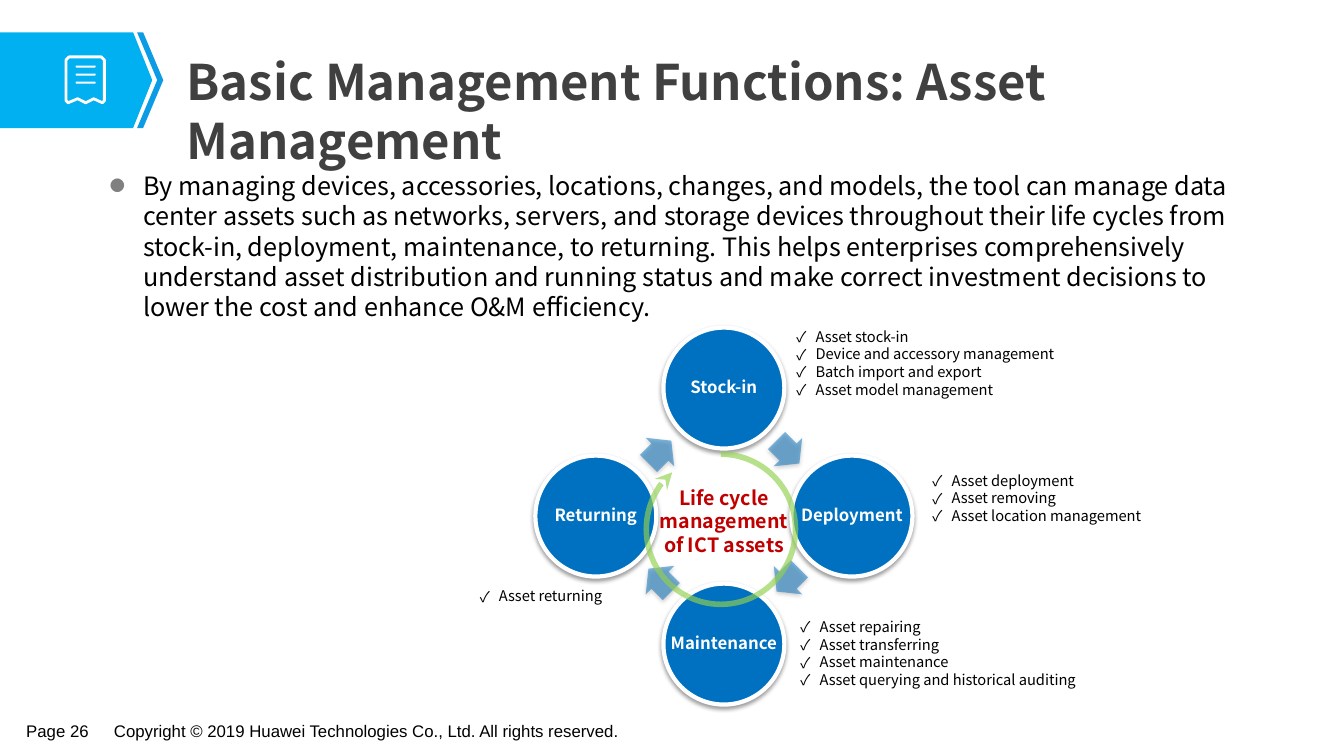
from math import cos, sin, radians
from lxml.etree import SubElement
from pptx import Presentation
from pptx.dml.color import RGBColor
from pptx.enum.shapes import MSO_SHAPE
from pptx.enum.text import MSO_ANCHOR, PP_ALIGN
from pptx.oxml.ns import qn
from pptx.util import Inches, Pt

HUES = {"sky": "00B0F0", "edge": "0B9CE5", "blue": "0070C0", "white": "FFFFFF",
        "dark": "404040", "black": "000000", "grey": "808080", "red": "C00000",
        "green": "92D050"}
FONT = "Noto Sans CJK SC"

BODY = ("By managing devices, accessories, locations, changes, and models, the tool can manage "
        "data center assets such as networks, servers, and storage devices throughout their "
        "life cycles from stock-in, deployment, maintenance, to returning. This helps "
        "enterprises comprehensively understand asset distribution and running status and "
        "make correct investment decisions to lower the cost and enhance O&M efficiency.")

# Stages clockwise from the top
STAGES = ["Stock-in", "Deployment", "Maintenance", "Returning"]

# Box, line spacing and items of each check list
LISTS = [
    ((7.8, 3.2, 2.88, 0.81), 1, ["Asset stock-in", "Device and accessory management",
                                 "Batch import and export", "Asset model management"]),
    ((9.15, 4.63, 2.37, 0.63), 1, ["Asset deployment", "Asset removing",
                                   "Asset location management"]),
    ((7.84, 6.08, 3.06, 0.81), 1, ["Asset repairing", "Asset transferring",
                                   "Asset maintenance",
                                   "Asset querying and historical auditing"]),
    ((4.66, 5.69, 1.48, 0.37), 1.5, ["Asset returning"]),
]


def rgb(hue):
    return RGBColor.from_string(HUES[hue])


def paint(shape, fill=None, line=None, width=1):
    shape.shadow.inherit = False
    if fill:
        shape.fill.solid()
        shape.fill.fore_color.rgb = rgb(fill)
    else:
        shape.fill.background()
    if line:
        shape.line.color.rgb = rgb(line)
        shape.line.width = Pt(width)
    else:
        shape.line.fill.background()
    return shape


def fade(color, share):
    SubElement(color, qn("a:alpha"), val=str(share * 1000))


def shade(shape):
    effects = shape._element.spPr.find(qn("a:effectLst"))
    shadow = SubElement(effects, qn("a:outerShdw"), blurRad="40000", dist="20000",
                        dir="5400000", rotWithShape="0")
    fade(SubElement(shadow, qn("a:srgbClr"), val=HUES["black"]), 38)


def place(slide, kind, mid, size):
    (x, y), (w, h) = mid, size
    return slide.shapes.add_shape(kind, Inches(x - w / 2), Inches(y - h / 2),
                                  Inches(w), Inches(h))


def draw(slide, box, points):
    spots = [(Inches(box[0] + x), Inches(box[1] + y)) for x, y in points]
    form = slide.shapes.build_freeform(*spots[0], scale=1.0)
    form.add_line_segments(spots[1:], close=True)
    return form.convert_to_shape()


def write(para, text, size, hue, bold=False, font=FONT):
    run = para.add_run()
    run.text = text
    run.font.size = Pt(size)
    run.font.bold = bold
    run.font.name = font
    run.font.color.rgb = rgb(hue)


def frame(slide, box, pad=(0.1, 0.05)):
    text = slide.shapes.add_textbox(*map(Inches, box)).text_frame
    text.word_wrap = True
    text.margin_left = text.margin_right = Inches(pad[0])
    text.margin_top = text.margin_bottom = Inches(pad[1])
    return text


def mark(para, char, indent, hue="black", share=100):
    props = para._p.get_or_add_pPr()
    props.set("marL", str(Inches(indent)))
    props.set("indent", str(-Inches(indent)))
    SubElement(SubElement(props, qn("a:buClr")), qn("a:srgbClr"), val=HUES[hue])
    SubElement(props, qn("a:buSzPct"), val=str(share * 1000))
    SubElement(props, qn("a:buFont"), typeface=FONT)
    SubElement(props, qn("a:buChar"), char=char)


def banner(slide, box):
    _, _, w, h = box
    # Pointed tag and its edge stripe
    tip, end = w - 0.11, w - 0.3
    paint(draw(slide, box, [(0, 0), (end, 0), (tip, h / 2), (end, h), (0, h)]), "sky")
    paint(draw(slide, box, [(w - 0.26, 0), (w - 0.2, 0), (w, h / 2), (w - 0.2, h),
                            (w - 0.26, h), (w - 0.06, h / 2)]), "edge")
    # Receipt icon
    left, right, top, low = 0.655, 1.035, 0.245, 0.7
    paint(draw(slide, box, [(left + 0.03, top), (right - 0.03, top), (right, top + 0.03),
                            (right, low - 0.02), (right - 0.02, low), (0.93, low - 0.04),
                            (0.85, low), (0.77, low - 0.04), (left + 0.02, low),
                            (left, low - 0.02), (left, top + 0.03)]), None, "white", 2)
    for row in range(3):
        spot = (box[0] + 0.85, box[1] + 0.34 + 0.08 * row)
        bar = place(slide, MSO_SHAPE.ROUNDED_RECTANGLE, spot, (0.2, 0.02))
        bar.adjustments[0] = 0.5
        paint(bar, "white")


def title(slide, box):
    text = frame(slide, box, (0.11, 0.06))
    write(text.paragraphs[0], "Basic Management Functions: Asset Management", 35, "dark", True)


def body(slide, box):
    para = frame(slide, box, (0.09, 0.04)).paragraphs[0]
    mark(para, "●", 0.33, "grey", 60)
    write(para, BODY, 18, "black")


def cycle(slide, box):
    x, y, w, h = box
    mid = (x + w / 2, y + h / 2)
    disc = 1.2
    reach = (w - disc) / 2
    for step, name in enumerate(STAGES):
        # Stage disc
        turn = radians(90 * step - 90)
        spot = (mid[0] + reach * cos(turn), mid[1] + reach * sin(turn))
        ball = paint(place(slide, MSO_SHAPE.OVAL, spot, (disc, disc)), "blue", "white", 3)
        shade(ball)
        text = ball.text_frame
        text.word_wrap = False
        text.vertical_anchor = MSO_ANCHOR.MIDDLE
        para = text.paragraphs[0]
        para.alignment = PP_ALIGN.CENTER
        para.line_spacing = 0.9
        write(para, name, 12, "white", True)
        # Arrow to the next stage
        turn = radians(90 * step - 45)
        gap = reach * cos(radians(45))
        spot = (mid[0] + gap * cos(turn), mid[1] + gap * sin(turn))
        arrow = place(slide, MSO_SHAPE.RIGHT_ARROW, spot, (0.32, 0.4))
        arrow.adjustments[0] = 0.6
        arrow.rotation = 45 + 90 * step
        paint(arrow, "blue")
        fade(arrow._element.spPr.find(qn("a:solidFill"))[0], 50)
        shade(arrow)
    # Caption in the middle
    para = frame(slide, (mid[0] - 0.74, mid[1] - 0.35, 1.48, 1.04), (0.05, 0.05)).paragraphs[0]
    para.alignment = PP_ALIGN.CENTER
    write(para, "Life cycle management of ICT assets", 14, "red", True)
    # Ring with an arrowhead
    ring = place(slide, MSO_SHAPE.ARC, (mid[0] - 0.03, mid[1] + 0.13), (1.48, 1.49))
    ring.adjustments[0], ring.adjustments[1] = 162, 137.72
    paint(ring, None, "green", 4)
    line = ring._element.spPr.find(qn("a:ln"))
    fade(line.find(qn("a:solidFill"))[0], 65)
    SubElement(line, qn("a:tailEnd"), type="stealth")


def checks(slide, box, space, items):
    text = frame(slide, box)
    for num, item in enumerate(items):
        para = text.add_paragraph() if num else text.paragraphs[0]
        mark(para, "✓", 0.19)
        para.line_spacing = float(space)
        write(para, item, 10.5, "black")


def footer(slide, box):
    x, y, w, h = box
    notes = [(0, 0.87, "Page 26"), (0.87, w - 0.87,
             "Copyright © 2019 Huawei Technologies Co., Ltd. All rights reserved.")]
    for left, wide, words in notes:
        text = frame(slide, (x + left, y, wide, h), (0.09, 0.04))
        write(text.paragraphs[0], words, 12, "black", font="Arial")


def main():
    deck = Presentation()
    deck.slide_width, deck.slide_height = Inches(13.33), Inches(7.5)
    slide = deck.slides.add_slide(deck.slide_layouts[6])
    footer(slide, (0.17, 7.11, 6.3, 0.29))
    banner(slide, (0, 0.32, 1.62, 0.95))
    title(slide, (1.74, 0.45, 10.75, 0.7))
    body(slide, (1, 1.65, 11.55, 5.12))
    cycle(slide, (5.31, 3.25, 3.74, 3.74))
    for box, space, items in LISTS:
        checks(slide, box, space, items)
    deck.save("out.pptx")


if __name__ == "__main__":
    main()
